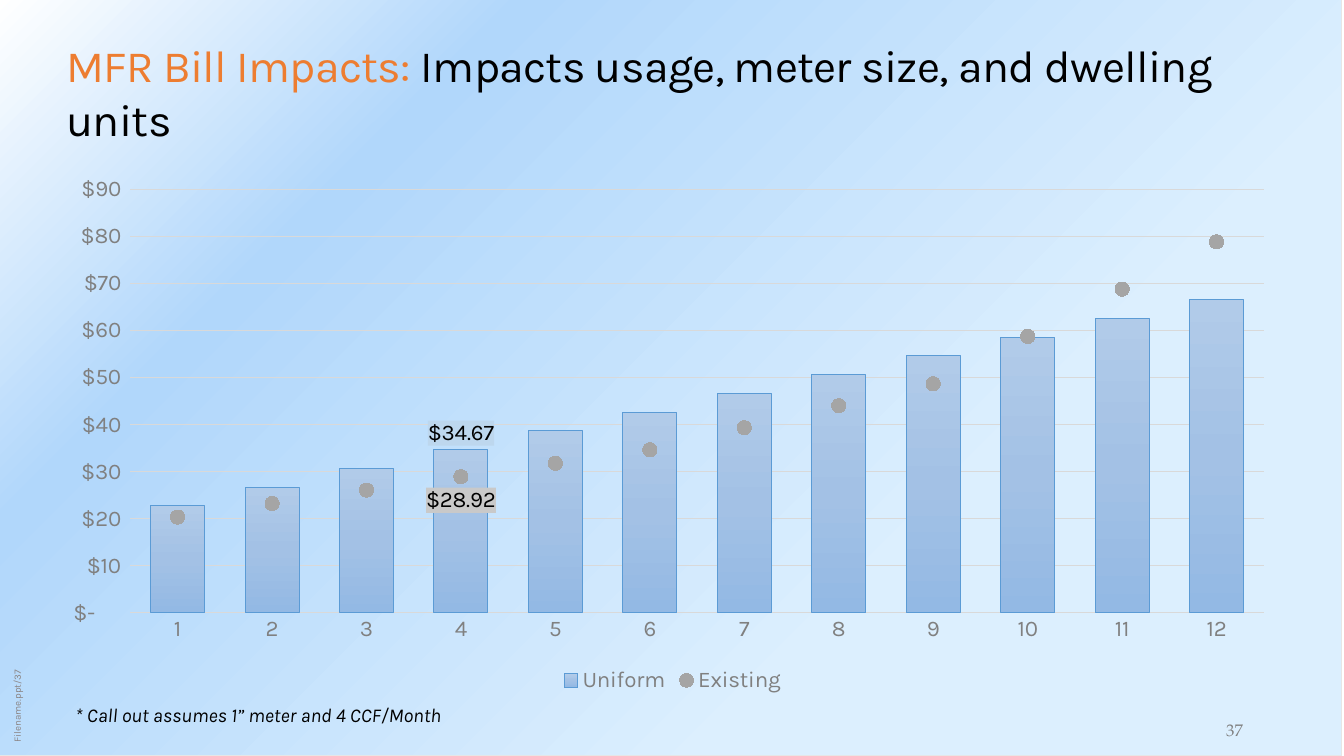
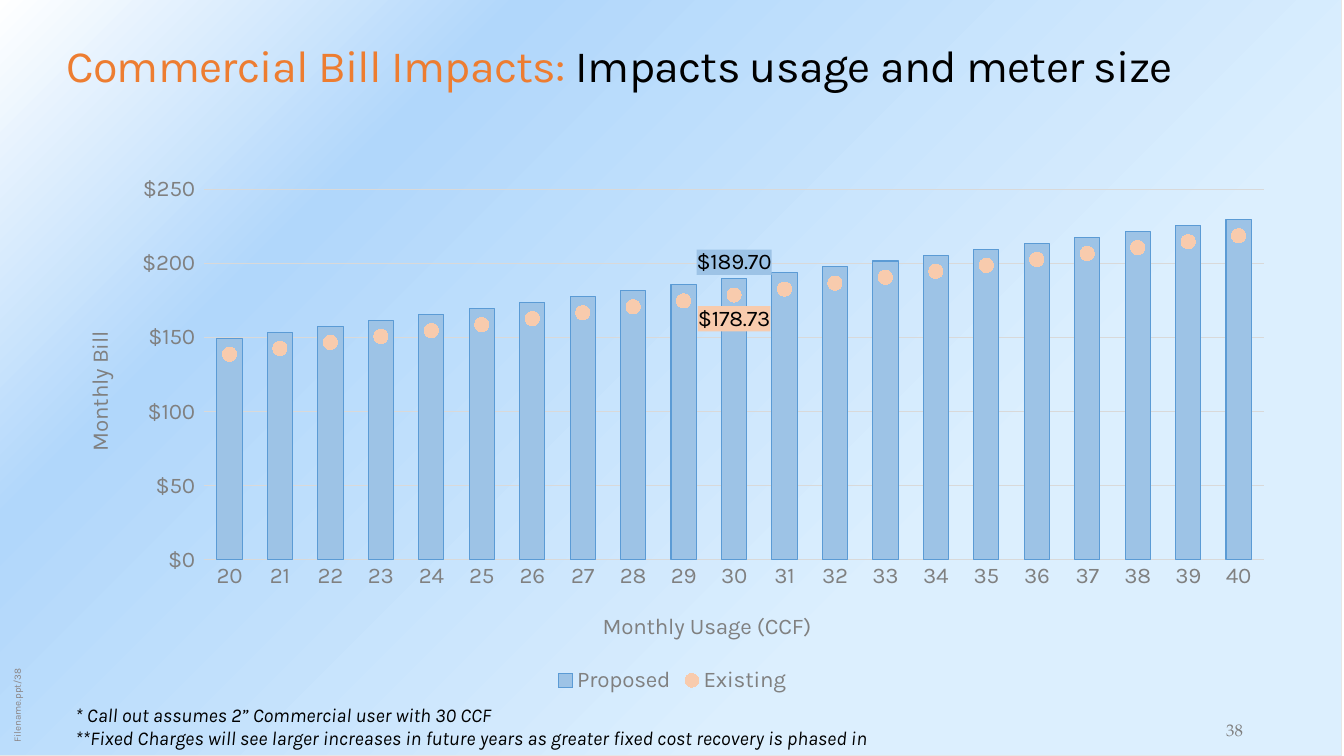
"""Build two bill impact slides with combined column and marker charts."""
from pptx import Presentation
from pptx.chart.data import CategoryChartData
from pptx.dml.color import RGBColor
from pptx.enum.chart import (XL_CHART_TYPE, XL_LABEL_POSITION, XL_LEGEND_POSITION,
                             XL_MARKER_STYLE, XL_TICK_MARK)
from pptx.enum.shapes import MSO_SHAPE
from pptx.enum.text import MSO_ANCHOR, PP_ALIGN
from pptx.oxml import parse_xml
from pptx.oxml.ns import nsdecls, qn
from pptx.util import Inches, Pt

COLUMNS = XL_CHART_TYPE.COLUMN_CLUSTERED
ABOVE, BELOW = XL_LABEL_POSITION.OUTSIDE_END, XL_LABEL_POSITION.BELOW
LEGEND_BOTTOM = XL_LEGEND_POSITION.BOTTOM
CIRCLE = XL_MARKER_STYLE.CIRCLE
NO_TICK = XL_TICK_MARK.NONE
RECTANGLE = MSO_SHAPE.RECTANGLE
TOP, BOTTOM = MSO_ANCHOR.TOP, MSO_ANCHOR.BOTTOM
LEFT, CENTER = PP_ALIGN.LEFT, PP_ALIGN.CENTER

BLACK = RGBColor(0x00, 0x00, 0x00)
ORANGE = RGBColor(0xED, 0x7D, 0x31)
GRAY = RGBColor(0x80, 0x80, 0x80)
TAG_GRAY = RGBColor(0x8B, 0x85, 0x85)
MARKER_GRAY = RGBColor(0xA5, 0xA5, 0xA5)
LABEL_GRAY = RGBColor(0xC9, 0xC9, 0xC9)
GRID_GRAY = RGBColor(0xD9, 0xD9, 0xD9)
EDGE_GRAY = RGBColor(0xE7, 0xE6, 0xE6)
WHITE = RGBColor(0xFF, 0xFF, 0xFF)
BAR_BLUE = RGBColor(0x9D, 0xC3, 0xE6)
BAR_EDGE = RGBColor(0x5B, 0x9B, 0xD5)
LABEL_BLUE = RGBColor(0xBD, 0xD7, 0xEE)
PEACH = RGBColor(0xF8, 0xCB, 0xAD)
SKY_STOPS = [(30, RGBColor(0xDC, 0xEF, 0xFE)), (75, RGBColor(0xB1, 0xD7, 0xFB)), (100, WHITE)]
BAR_STOPS = [(0, RGBColor(0xB1, 0xCB, 0xE9)), (50, RGBColor(0xA3, 0xC1, 0xE5)),
             (100, RGBColor(0x93, 0xB9, 0xE4))]
FROM_CORNER = '<a:path path="circle"><a:fillToRect l="100000" t="100000"/></a:path>'
DOWNWARD = '<a:lin ang="5400000" scaled="0"/>'

FONT, NUMBER_FONT = "Karla", "TeX Gyre Pagella"
WIDTH, HEIGHT = 13.33, 7.5
MARGIN, CONTENT_WIDTH = 0.56, 12.22

SLIDES = [
    {
        "number": 37,
        "title": ("MFR Bill Impacts:", " Impacts usage, meter size, and dwelling units"),
        "notes": ["* Call out assumes 1” meter and 4 CCF/Month"],
        "categories": range(1, 13),
        "columns": ("Uniform", [round(22.7 + 3.99 * step, 2) for step in range(12)]),
        "markers": ("Existing", [20.34, 23.2, 26.06, 28.92, 31.78, 34.64,
                                 39.32, 44, 48.68, 58.74, 68.8, 78.86]),
        "callout": 3, "gap": 75, "overlap": -25, "top": 90, "step": 10,
        "format": '_("$"* #,##0_);_("$"* \\(#,##0\\);_("$"* "-"??_);_(@_)',
        "plot": (0.06, 0.04, 0.92, 0.8),
        "axis_titles": None,
        "bar_stops": BAR_STOPS, "marker_color": MARKER_GRAY,
        "label_fills": (LABEL_BLUE, LABEL_GRAY),
    },
    {
        "number": 38,
        "title": ("Commercial Bill Impacts:", " Impacts usage and meter size"),
        "notes": ["* Call out assumes 2” Commercial user with 30 CCF",
                  "**Fixed Charges will see larger increases in future years as greater "
                  "fixed cost recovery is phased in"],
        "categories": range(20, 41),
        "columns": ("Proposed", [round(149.7 + 4 * step, 2) for step in range(21)]),
        "markers": ("Existing", [round(138.73 + 4 * step, 2) for step in range(21)]),
        "callout": 10, "gap": 100, "overlap": 0, "top": 250, "step": 50,
        "format": '"$"#,##0_);\\("$"#,##0\\)',
        "plot": (0.12, 0.04, 0.86, 0.7),
        "axis_titles": [("Monthly Usage (CCF)", 0.44, 0.83), ("Monthly Bill", 0.02, 0.3)],
        "bar_stops": None, "marker_color": PEACH,
        "label_fills": (BAR_BLUE, PEACH),
    },
]


def style_font(font, size, color, name=FONT, italic=False):
    font.name, font.size, font.italic, font.bold = name, Pt(size), italic, False
    font.color.rgb = color


def style_line(line, color):
    line.color.rgb = color
    line.width = Pt(0.75)


def set_gradient(properties, stops, direction):
    stop_xml = "".join(f'<a:gs pos="{share * 1000}"><a:srgbClr val="{color}"/></a:gs>'
                       for share, color in stops)
    gradient = parse_xml(f'<a:gradFill {nsdecls("a")} rotWithShape="1"><a:gsLst>{stop_xml}'
                         f'</a:gsLst>{direction}</a:gradFill>')
    properties.replace(properties.find(qn("a:solidFill")), gradient)


def set_layout(element, index, x, y, size=None):
    for layout in element.findall(qn("c:layout")):
        element.remove(layout)
    parts = [("xMode", "edge"), ("yMode", "edge"), ("x", x), ("y", y)]
    if size:
        parts = [("layoutTarget", "inner")] + parts + [("w", size[0]), ("h", size[1])]
    inner = "".join(f'<c:{tag} val="{value}"/>' for tag, value in parts)
    element.insert(index, parse_xml(f'<c:layout {nsdecls("c")}><c:manualLayout>{inner}'
                                    '</c:manualLayout></c:layout>'))


def add_text(page, place, paragraphs, anchor=TOP, inset=None, align=LEFT):
    """Each paragraph is a list of (text, font settings) runs."""
    box = page.shapes.add_textbox(*map(Inches, place))
    frame = box.text_frame
    frame.word_wrap = True
    frame.vertical_anchor = anchor
    if inset is not None:
        frame.margin_left = frame.margin_right = Inches(inset)
        frame.margin_top = frame.margin_bottom = Inches(inset)
    for index, runs in enumerate(paragraphs):
        para = frame.add_paragraph() if index else frame.paragraphs[0]
        para.alignment = align
        for text, settings in runs:
            span = para.add_run()
            span.text = text
            style_font(span.font, *settings)
    return box


def add_frame(page, slide):
    backdrop = page.shapes.add_shape(RECTANGLE, Inches(-0.02), 0, Inches(WIDTH), Inches(HEIGHT))
    backdrop.shadow.inherit = False
    backdrop.fill.solid()
    backdrop.fill.fore_color.rgb = WHITE
    set_gradient(backdrop._element.spPr, SKY_STOPS, FROM_CORNER)
    style_line(backdrop.line, EDGE_GRAY)

    number = slide["number"]
    tag = add_text(page, (-1.17, 5.97, 2.67, 0.22),
                   [[(f"Filename.ppt/{number}", (7, TAG_GRAY))]], BOTTOM, 0.05)
    tag.rotation = 270
    add_text(page, (11.79, 7.09, 0.91, 0.3),
             [[(str(number), (12, GRAY, NUMBER_FONT))]], BOTTOM, 0.05, CENTER)

    topic, detail = slide["title"]
    title = add_text(page, (MARGIN, 0.33, CONTENT_WIDTH, 1.17),
                     [[(topic, (32, ORANGE)), (detail, (32, BLACK))]])
    for span in title.text_frame.paragraphs[0].runs:
        span.font._element.set("spc", "-50")
    notes = slide["notes"]
    add_text(page, (0.65, 6.92, 9.11, 0.1 + 0.24 * len(notes)),
             [[(note, (14, BLACK, FONT, True))] for note in notes])


def move_to_markers(chart):
    bars = chart.plots[0]._element
    series = bars.findall(qn("c:ser"))[1]
    for flag in series.findall(qn("c:invertIfNegative")):
        series.remove(flag)
    lines = parse_xml(f'<c:lineChart {nsdecls("c")}><c:grouping val="standard"/>'
                      '<c:varyColors val="0"/><c:marker val="1"/></c:lineChart>')
    lines.insert(2, series)
    for axis in bars.findall(qn("c:axId")):
        lines.append(parse_xml(f'<c:axId {nsdecls("c")} val="{axis.get("val")}"/>'))
    bars.addnext(lines)


def add_callout(series, index, position, color):
    series.data_labels.show_value = False
    label = series.points[index].data_label
    style_font(label.font, 16, BLACK)
    label.position = position
    text = series._element.find(".//" + qn("c:dLbl")).find(qn("c:txPr"))
    text.addprevious(parse_xml(f'<c:spPr {nsdecls("c", "a")}><a:solidFill>'
                               f'<a:srgbClr val="{color}"/></a:solidFill></c:spPr>'))


def style_axes(chart, slide):
    category, value = chart.category_axis, chart.value_axis
    for axis in (category, value):
        axis.major_tick_mark = axis.minor_tick_mark = NO_TICK
        style_font(axis.tick_labels.font, 16, GRAY)
    category.has_major_gridlines = False
    style_line(category.format.line, GRID_GRAY)
    value.format.line.fill.background()
    value.has_major_gridlines = True
    style_line(value.major_gridlines.format.line, GRID_GRAY)
    value.minimum_scale, value.maximum_scale = 0, slide["top"]
    value.major_unit = slide["step"]
    value.tick_labels.number_format = slide["format"]
    value.tick_labels.number_format_is_linked = False
    if slide["axis_titles"]:
        for axis, (text, x, y) in zip((category, value), slide["axis_titles"]):
            frame = axis.axis_title.text_frame
            frame.text = text
            style_font(frame.paragraphs[0].runs[0].font, 16, GRAY)
            set_layout(axis.axis_title._element, 1, x, y)


def add_bill_chart(page, slide):
    data = CategoryChartData(number_format='"$"#,##0.00')
    data.categories = [str(usage) for usage in slide["categories"]]
    for name, values in (slide["columns"], slide["markers"]):
        data.add_series(name, values)
    place = map(Inches, (MARGIN, 1.67, CONTENT_WIDTH, 5.25))
    chart = page.shapes.add_chart(COLUMNS, *place, data).chart
    style_font(chart.font, 16, BLACK)
    chart.has_title = False
    chart.has_legend = True
    chart.legend.position = LEGEND_BOTTOM
    chart.legend.include_in_layout = False
    style_font(chart.legend.font, 16, GRAY)
    style_axes(chart, slide)
    move_to_markers(chart)

    plot = chart.plots[0]
    plot.vary_by_categories = False
    plot.gap_width, plot.overlap = slide["gap"], slide["overlap"]
    columns, markers = plot.series[0], chart.plots[1].series[0]
    columns.format.fill.solid()
    columns.format.fill.fore_color.rgb = BAR_BLUE
    style_line(columns.format.line, BAR_EDGE)
    if slide["bar_stops"]:
        set_gradient(columns._element.find(qn("c:spPr")), slide["bar_stops"], DOWNWARD)

    markers.smooth = False
    markers.format.line.fill.background()
    markers.marker.style, markers.marker.size = CIRCLE, 10
    markers.marker.format.fill.solid()
    markers.marker.format.fill.fore_color.rgb = slide["marker_color"]
    markers.marker.format.line.fill.background()

    for series, position, color in zip((columns, markers), (ABOVE, BELOW), slide["label_fills"]):
        add_callout(series, slide["callout"], position, color)
    x, y, width, height = slide["plot"]
    set_layout(plot._element.getparent(), 0, x, y, (width, height))


def main():
    deck = Presentation()
    deck.slide_width, deck.slide_height = Inches(WIDTH), Inches(HEIGHT)
    for slide in SLIDES:
        page = deck.slides.add_slide(deck.slide_layouts[6])
        add_frame(page, slide)
        add_bill_chart(page, slide)
    deck.save("out.pptx")


if __name__ == "__main__":
    main()
